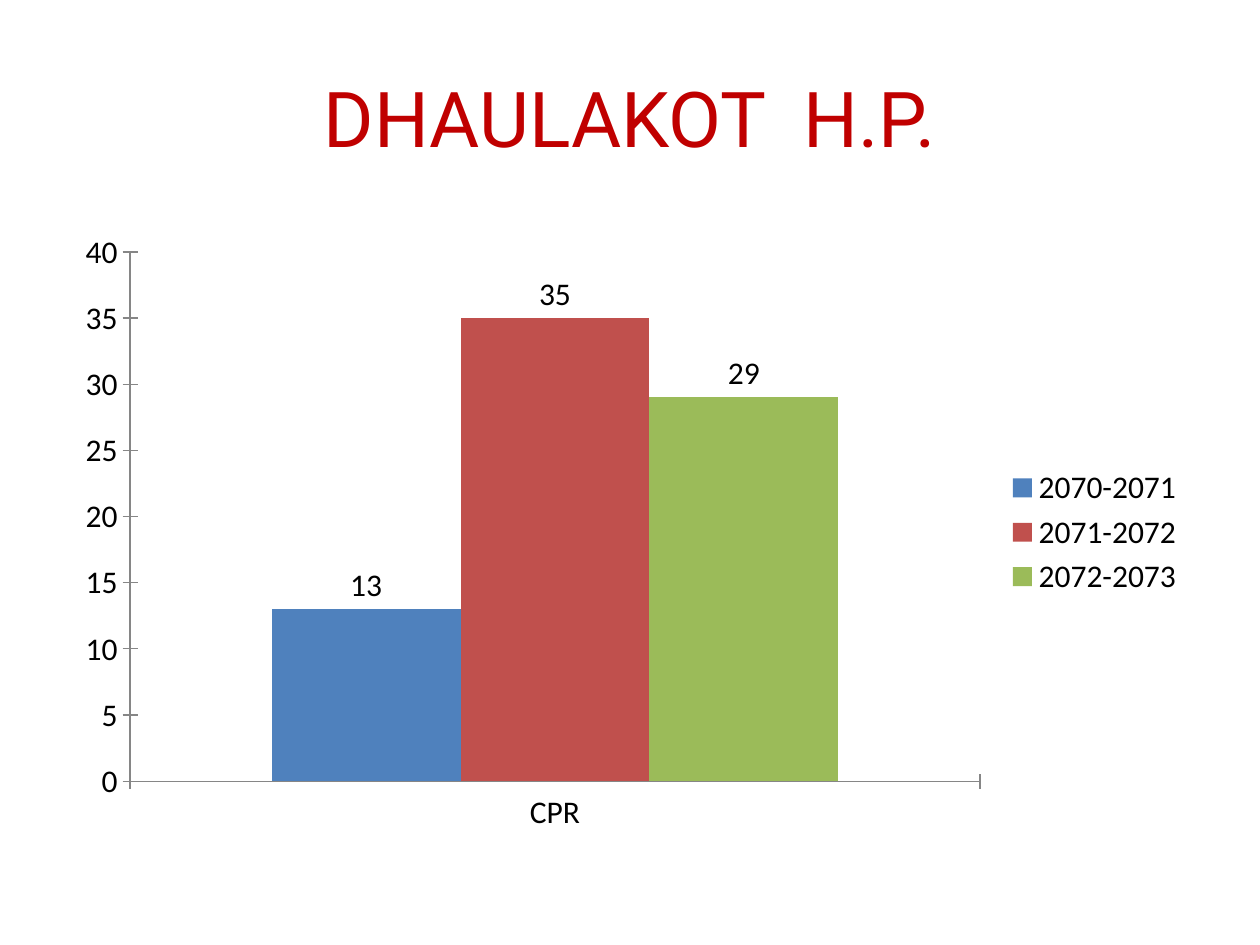
"""Build the Dhaulakot H.P. slide with its CPR column chart."""
import pptx
import pptx.chart.data
import pptx.dml.color
import pptx.enum.chart
import pptx.enum.text
import pptx.util

Pt = pptx.util.Pt


def rgb(value):
    return pptx.dml.color.RGBColor.from_string(value)


prs = pptx.Presentation()
prs.slide_width, prs.slide_height = Pt(720), Pt(540)
s = prs.slides.add_slide(prs.slide_layouts[6])
s.background.fill.solid()
s.background.fill.fore_color.rgb = rgb("FFFFFF")

sp = s.shapes.add_textbox(Pt(36), Pt(21.6), Pt(648), Pt(90))
tf = sp.text_frame
tf.word_wrap = True
tf.vertical_anchor = pptx.enum.text.MSO_ANCHOR.MIDDLE
p = tf.paragraphs[0]
p.text = "DHAULAKOT  H.P."
p.alignment = pptx.enum.text.PP_ALIGN.CENTER
p.font.name = "Roboto"
p.font.size = Pt(44)
p.font.color.rgb = rgb("C00000")

series = [
    ("2070-2071", 13, "4F81BD"),
    ("2071-2072", 35, "C0504D"),
    ("2072-2073", 29, "9BBB59"),
]
data = pptx.chart.data.CategoryChartData()
data.categories = ["CPR"]
for name, value, color in series:
    data.add_series(name, [value])

chart = s.shapes.add_chart(
    pptx.enum.chart.XL_CHART_TYPE.COLUMN_CLUSTERED,
    Pt(36), Pt(126), Pt(648), Pt(356.4), data,
).chart
chart.has_title = False
chart.font.name = "Calibri"
chart.font.size = Pt(18)
chart.font.color.rgb = rgb("000000")
chart.has_legend = True
chart.legend.position = pptx.enum.chart.XL_LEGEND_POSITION.RIGHT
chart.legend.include_in_layout = False

for axis in (chart.category_axis, chart.value_axis):
    axis.has_major_gridlines = False
    axis.major_tick_mark = pptx.enum.chart.XL_TICK_MARK.CROSS
    axis.format.line.color.rgb = rgb("868686")
    axis.format.line.width = Pt(0.75)

plot = chart.plots[0]
plot.gap_width = 150
plot.vary_by_categories = False
for column, (name, value, color) in zip(plot.series, series):
    column.format.fill.solid()
    column.format.fill.fore_color.rgb = rgb(color)
    column.data_labels.show_value = True

prs.save("out.pptx")
